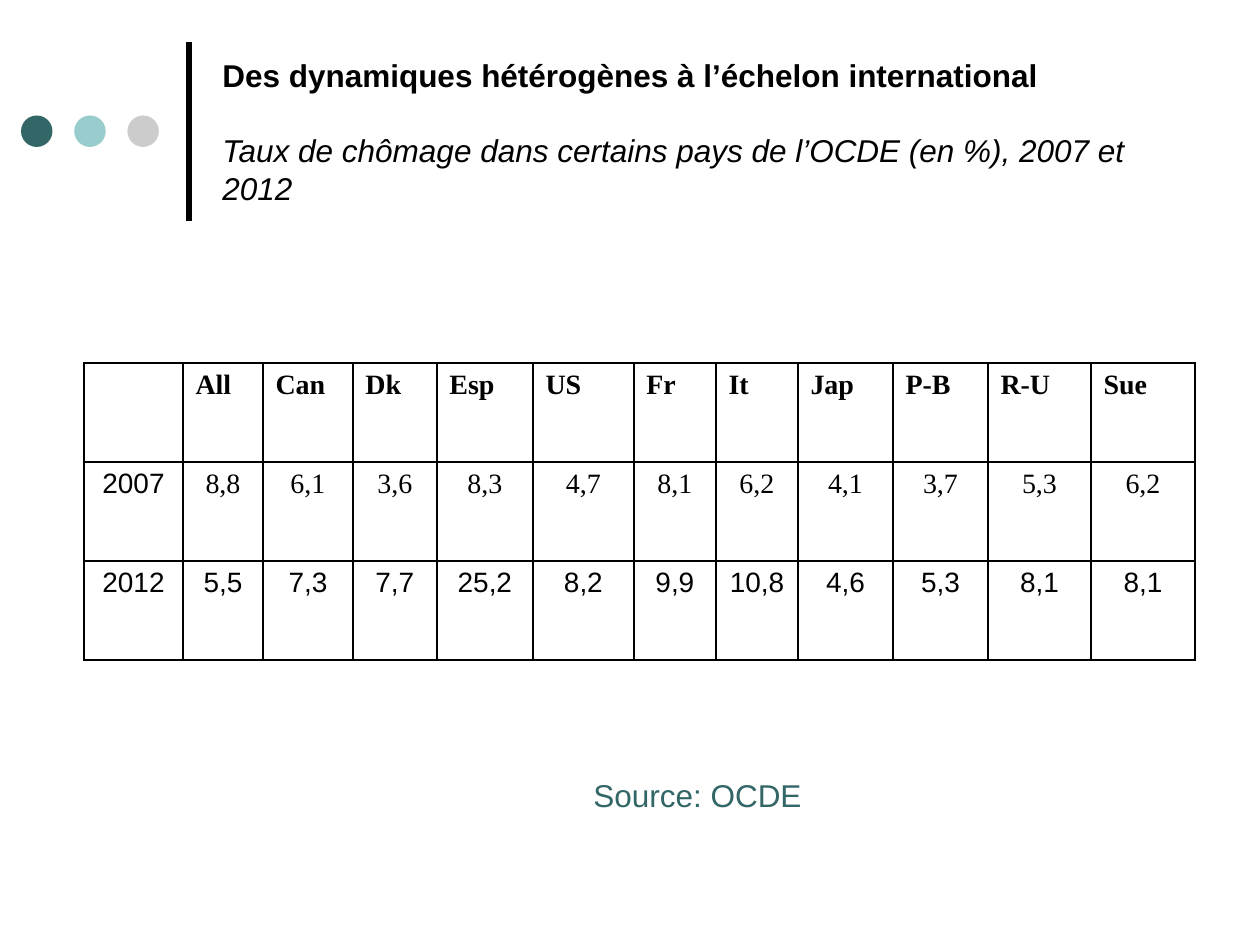
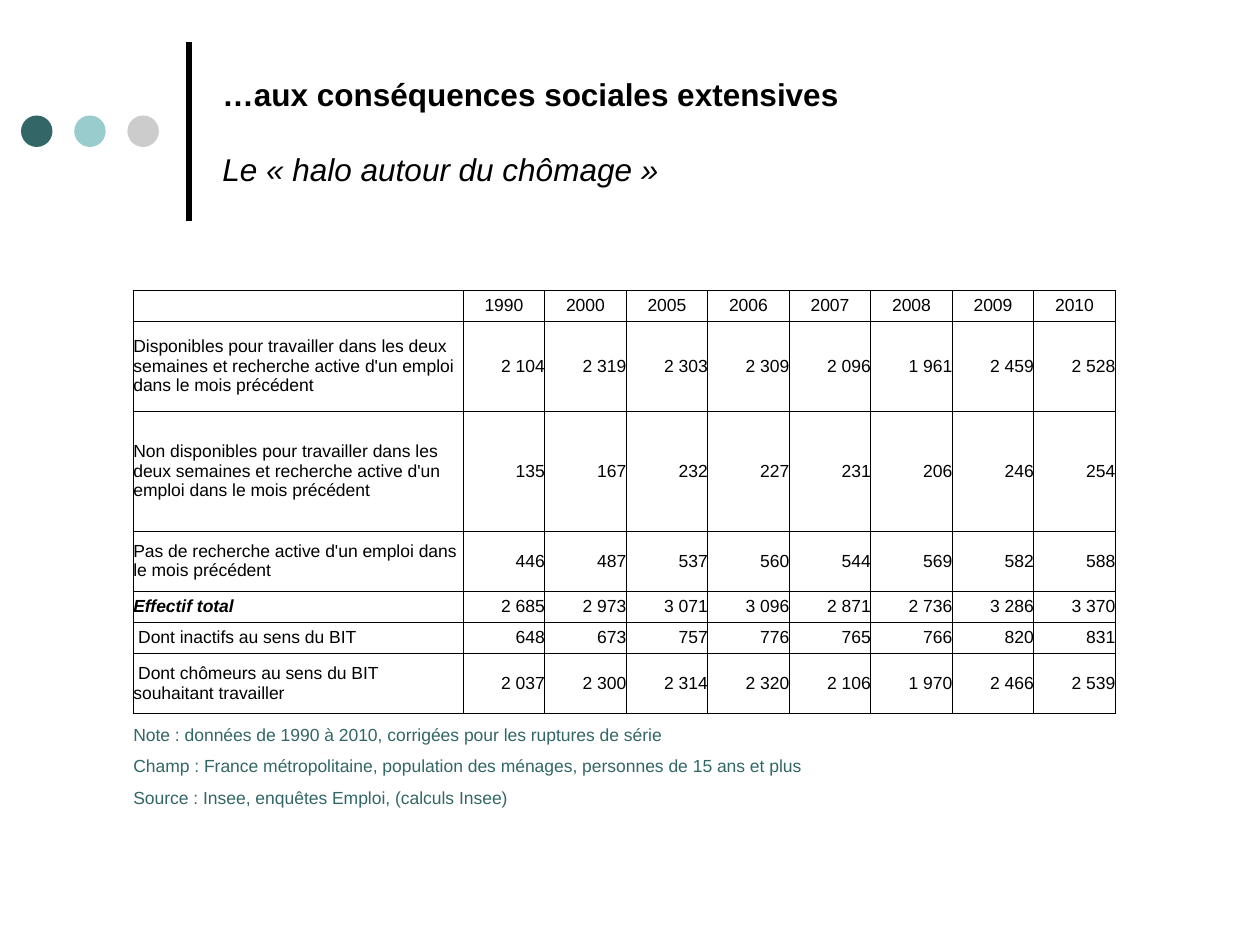
"""Build two slides on unemployment: OECD rates and the halo around unemployment."""
from lxml.etree import SubElement
from pptx import Presentation
from pptx.dml.color import RGBColor
from pptx.enum.shapes import MSO_CONNECTOR, MSO_SHAPE
from pptx.enum.text import MSO_ANCHOR, PP_ALIGN
from pptx.oxml.ns import qn
from pptx.util import Pt

BLACK, TEAL, AQUA, GREY = "000000", "336666", "99CCCC", "CCCCCC"


def paint(color_format, hex_color):
    color_format.rgb = RGBColor.from_string(hex_color)


def write(paragraph, text, hex_color=BLACK, alignment=PP_ALIGN.LEFT, **font_values):
    paragraph.alignment = alignment
    run = paragraph.add_run()
    run.text = text
    for attribute, value in font_values.items():
        setattr(run.font, attribute, value)
    paint(run.font.color, hex_color)


heading = dict(name="Arial", size=Pt(18), bold=True)
subheading = dict(name="Arial", size=Pt(18), italic=True)
caption = dict(name="Arial", size=Pt(18), hex_color=TEAL)
country = dict(name="Times New Roman", size=Pt(16), bold=True)
rate = dict(name="Arial", size=Pt(16), alignment=PP_ALIGN.CENTER)
serif_rate = rate | dict(name="Times New Roman")
label = dict(name="Arial", size=Pt(10))
total = label | dict(bold=True, italic=True)
year = label | dict(alignment=PP_ALIGN.CENTER)
count = label | dict(alignment=PP_ALIGN.RIGHT)
note = label | dict(hex_color=TEAL)

rates = [
    (56.6, "", rate, country, "All Can Dk Esp US Fr It Jap P-B R-U Sue".split()),
    (56.6, "2007", rate, serif_rate, "8,8 6,1 3,6 8,3 4,7 8,1 6,2 4,1 3,7 5,3 6,2".split()),
    (56.6, "2012", rate, rate, "5,5 7,3 7,7 25,2 8,2 9,9 10,8 4,6 5,3 8,1 8,1".split()),
]
halo = [(17.7, "", label, year, "1990 2000 2005 2006 2007 2008 2009 2010".split())]
for height, group, style, people in [
    (51.4, "Disponibles pour travailler dans les deux semaines et recherche active d'un emploi "
     "dans le mois précédent", label, [2104, 2319, 2303, 2309, 2096, 1961, 2459, 2528]),
    (68.6, "Non disponibles pour travailler dans les deux semaines et recherche active d'un emploi "
     "dans le mois précédent", label, [135, 167, 232, 227, 231, 206, 246, 254]),
    (34.3, "Pas de recherche active d'un emploi dans le mois précédent", label,
     [446, 487, 537, 560, 544, 569, 582, 588]),
    (17.7, "Effectif total", total, [2685, 2973, 3071, 3096, 2871, 2736, 3286, 3370]),
    (18, " Dont inactifs au sens du BIT", label, [648, 673, 757, 776, 765, 766, 820, 831]),
    (34.3, " Dont chômeurs au sens du BIT souhaitant travailler", label,
     [2037, 2300, 2314, 2320, 2106, 1970, 2466, 2539]),
]:
    halo.append((height, group, style, count, [f"{n:,}".replace(",", " ") for n in people]))
notes = [
    ("Note : données de 1990 à 2010, corrigées pour les ruptures de série", 5),
    ("Champ : France métropolitaine, population des ménages, personnes de 15 ans et plus", 7),
    ("Source : Insee, enquêtes Emploi, (calculs Insee)", 3),
]
halo += [(18, remark, note, note, [""] * 8) for remark, span in notes]

rate_widths = [56.6, 45.7, 51.4, 48, 54.9, 57.7, 46.9, 46.9, 54.3, 54.3, 58.9, 59.4]
halo_widths = [188.5] + [46.6] * 8
rate_cell = dict(vertical_anchor=MSO_ANCHOR.TOP)
halo_cell = dict(vertical_anchor=MSO_ANCHOR.MIDDLE, margin_left=0, margin_right=0,
                 margin_top=0, margin_bottom=0)
contents = [
    ("Des dynamiques hétérogènes à l’échelon international",
     "Taux de chômage dans certains pays de l’OCDE (en %), 2007 et 2012",
     (48, 207.4), rate_widths, rates, rate_cell, 1, 16, []),
    ("…aux conséquences sociales extensives", "Le «\u00a0halo autour du chômage\u00a0»".replace("\u00a0", chr(160)),
     (76.2, 165.8), halo_widths, halo, halo_cell, 0.5, 10, notes),
]

deck = Presentation()
deck.slide_width, deck.slide_height = Pt(720), Pt(540)

for topic, subtitle, (left, top), widths, rows, cell_values, border, size, remarks in contents:
    slide = deck.slides.add_slide(deck.slide_layouts[6])

    rule = slide.shapes.add_connector(MSO_CONNECTOR.STRAIGHT, Pt(108), Pt(126), Pt(108), Pt(24))
    rule.line.width = Pt(3)
    paint(rule.line.color, BLACK)
    SubElement(rule._element.spPr, qn("a:effectLst"))
    for position, hex_color in enumerate([TEAL, AQUA, GREY]):
        dot = slide.shapes.add_shape(MSO_SHAPE.OVAL, Pt(12 + 30.4 * position), Pt(66), Pt(18), Pt(18))
        dot.shadow.inherit = False
        dot.fill.solid()
        paint(dot.fill.fore_color, hex_color)
        dot.line.fill.background()

    title = slide.shapes.add_textbox(Pt(120), Pt(15), Pt(552), Pt(120)).text_frame
    title.word_wrap = True
    title.vertical_anchor = MSO_ANCHOR.MIDDLE
    write(title.paragraphs[0], topic, **heading)
    title.paragraphs[0].space_after = Pt(21)
    write(title.add_paragraph(), subtitle, **subheading)

    table = slide.shapes.add_table(len(rows), len(widths), Pt(left), Pt(top), Pt(sum(widths)),
                                   Pt(sum(row[0] for row in rows))).table
    table.first_row = table.horz_banding = False
    for column, width in zip(table.columns, widths):
        column.width = Pt(width)

    first_remark = len(rows) - len(remarks)
    for r, (height, row_label, label_style, value_style, values) in enumerate(rows):
        table.rows[r].height = Pt(height)
        edges = "LRTB" if r < first_remark else "T" if r == first_remark else ""
        for c, text in enumerate([row_label] + values):
            cell = table.cell(r, c)
            for attribute, value in cell_values.items():
                setattr(cell, attribute, value)
            if r >= first_remark:
                cell.vertical_anchor = MSO_ANCHOR.BOTTOM
            paragraph = cell.text_frame.paragraphs[0]
            if text:
                write(paragraph, text, **(value_style if c else label_style))
            SubElement(paragraph._p, qn("a:endParaRPr"), sz=str(size * 100))
            properties = cell._tc.get_or_add_tcPr()
            for side in "LRTB":
                edge = SubElement(properties, qn(f"a:ln{side}"), w=str(Pt(border)))
                if side in edges:
                    SubElement(SubElement(edge, qn("a:solidFill")), qn("a:srgbClr"), val=BLACK)
                else:
                    SubElement(edge, qn("a:noFill"))
            cell.fill.background()

    for r, (remark, span) in enumerate(remarks, first_remark):
        table.cell(r, 0).merge(table.cell(r, span - 1))

source = deck.slides[0].shapes.add_textbox(Pt(332), Pt(440), Pt(134.6), Pt(51)).text_frame
source.word_wrap = False
write(source.paragraphs[0], "Source: OCDE", **caption)

deck.save("out.pptx")
